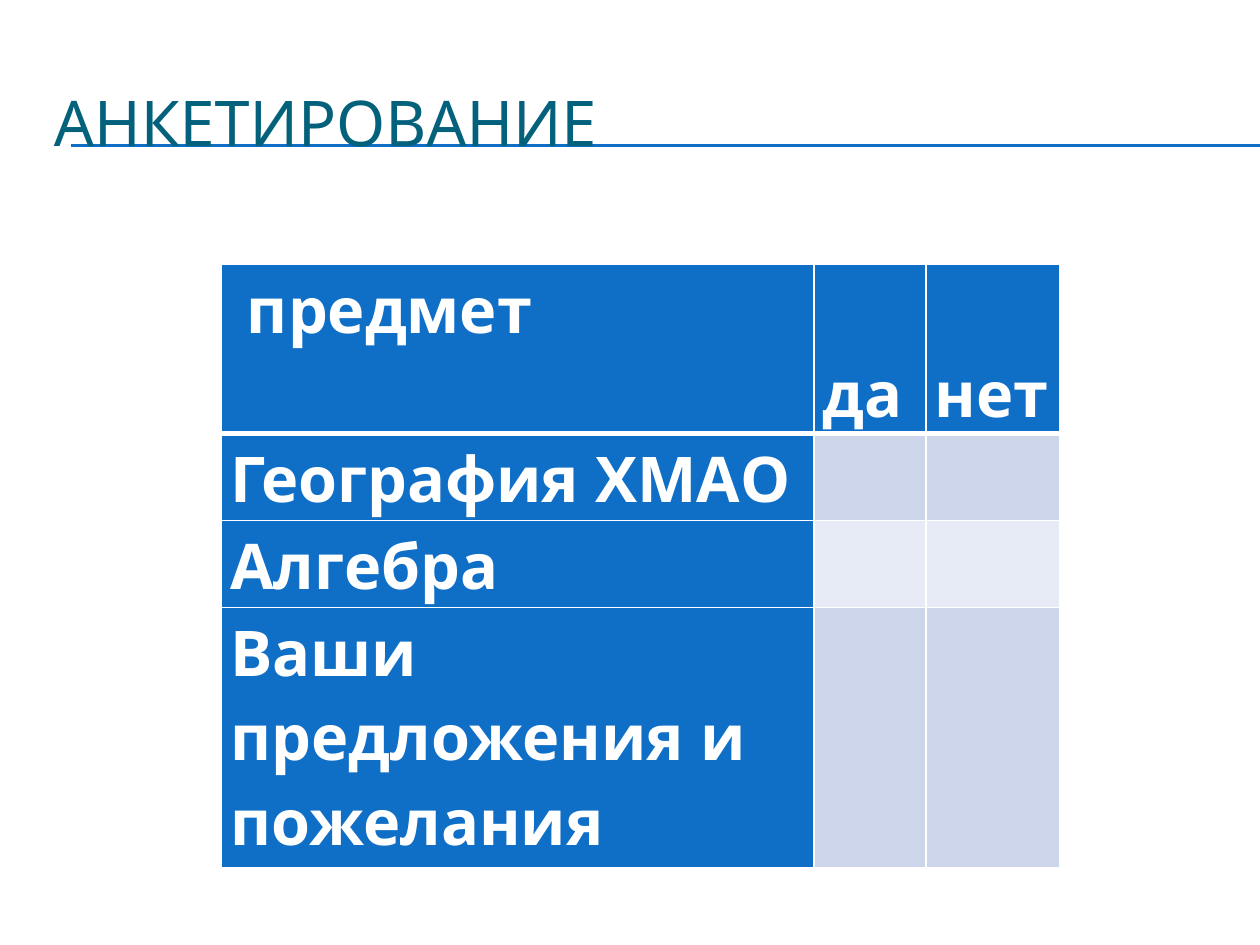
import pptx
import pptx.util
import pptx.dml.color
import pptx.enum.shapes
import pptx.enum.text
import pptx.oxml.ns
import lxml.etree

Inches = pptx.util.Inches
Pt = pptx.util.Pt
ANCHOR = pptx.enum.text.MSO_ANCHOR

TITLE = "АНКЕТИРОВАНИЕ"
ROWS = [
    ("предмет", "да", "нет"),
    ("География ХМАО", "", ""),
    ("Алгебра", "", ""),
    ("Ваши предложения и пожелания", "", ""),
]
COLUMN_WIDTHS = (4.7, 0.89, 1.06)
ROW_HEIGHTS = (1.34, 0.67, 0.67, 2.02)
RULE_HEIGHTS = (1.15, 1.16)
THEME = {
    "font": "Karla", "size": 36, "title": "04617B", "accent": "0F6FC6",
    "white": "FFFFFF", "bands": ("E7EBF5", "CCD5EA"),
    "rule": 0.75, "border": 1, "header_border": 3,
}


def color(value):
    return pptx.dml.color.RGBColor.from_string(value)


def assign(target, values):
    for name, value in values.items():
        setattr(target, name, value)


def write(frame, text, ink, bold, spacing):
    para = frame.paragraphs[0]
    para.line_spacing = spacing
    span = para.add_run()
    span.text = text
    assign(span.font, {"name": THEME["font"], "size": Pt(THEME["size"]), "bold": bold})
    span.font.color.rgb = color(ink)


def add_border(cell, side, points):
    properties = cell._tc.get_or_add_tcPr()
    tag = pptx.oxml.ns.qn
    line = lxml.etree.SubElement(properties, tag("a:ln" + side), w=str(Pt(points)))
    fill = lxml.etree.SubElement(line, tag("a:solidFill"))
    lxml.etree.SubElement(fill, tag("a:srgbClr"), val=THEME["white"])


def add_rule(page, height):
    rule = page.shapes.add_connector(
        pptx.enum.shapes.MSO_CONNECTOR.STRAIGHT,
        Inches(0.56), Inches(height), Inches(10), Inches(height))
    rule.line.color.rgb = color(THEME["accent"])
    rule.line.width = Pt(THEME["rule"])
    lxml.etree.SubElement(rule._element.spPr, pptx.oxml.ns.qn("a:effectLst"))


def add_title(page):
    box = page.shapes.add_textbox(Inches(0.33), Inches(0.5), Inches(9.5), Inches(0.92))
    assign(box.text_frame, {"word_wrap": True, "vertical_anchor": ANCHOR.MIDDLE})
    write(box.text_frame, TITLE, THEME["title"], False, 1.0)


def format_cell(cell, text, row, column):
    header = row == 0
    edges = {side: THEME["border"] for side in "LRTB"}
    if row < 2:
        edges["B" if header else "T"] = THEME["header_border"]
    for side, points in edges.items():
        add_border(cell, side, points)
    cell.fill.solid()
    strong = header or column == 0
    cell.fill.fore_color.rgb = color(THEME["accent"] if strong else THEME["bands"][row % 2])
    assign(cell, {
        "margin_left": Inches(0.2 if header and column == 0 else 0.07),
        "margin_right": Inches(0.07), "margin_top": 0, "margin_bottom": 0,
        "vertical_anchor": ANCHOR.BOTTOM if header and column else ANCHOR.TOP,
    })
    if text:
        write(cell.text_frame, text, THEME["white"], True, 1.15)


def add_survey(page):
    table = page.shapes.add_table(
        len(ROWS), len(COLUMN_WIDTHS), Inches(1.76), Inches(2.1),
        Inches(sum(COLUMN_WIDTHS)), Inches(sum(ROW_HEIGHTS))).table
    for column, width in zip(table.columns, COLUMN_WIDTHS):
        column.width = Inches(width)
    for row, height in zip(table.rows, ROW_HEIGHTS):
        row.height = Inches(height)
    for row, texts in enumerate(ROWS):
        for column, text in enumerate(texts):
            format_cell(table.cell(row, column), text, row, column)


def main():
    deck = pptx.Presentation()
    assign(deck, {"slide_width": Inches(10), "slide_height": Inches(7.5)})
    page = deck.slides.add_slide(deck.slide_layouts[6])
    for height in RULE_HEIGHTS:
        add_rule(page, height)
    add_title(page)
    add_survey(page)
    deck.save("out.pptx")


if __name__ == "__main__":
    main()
